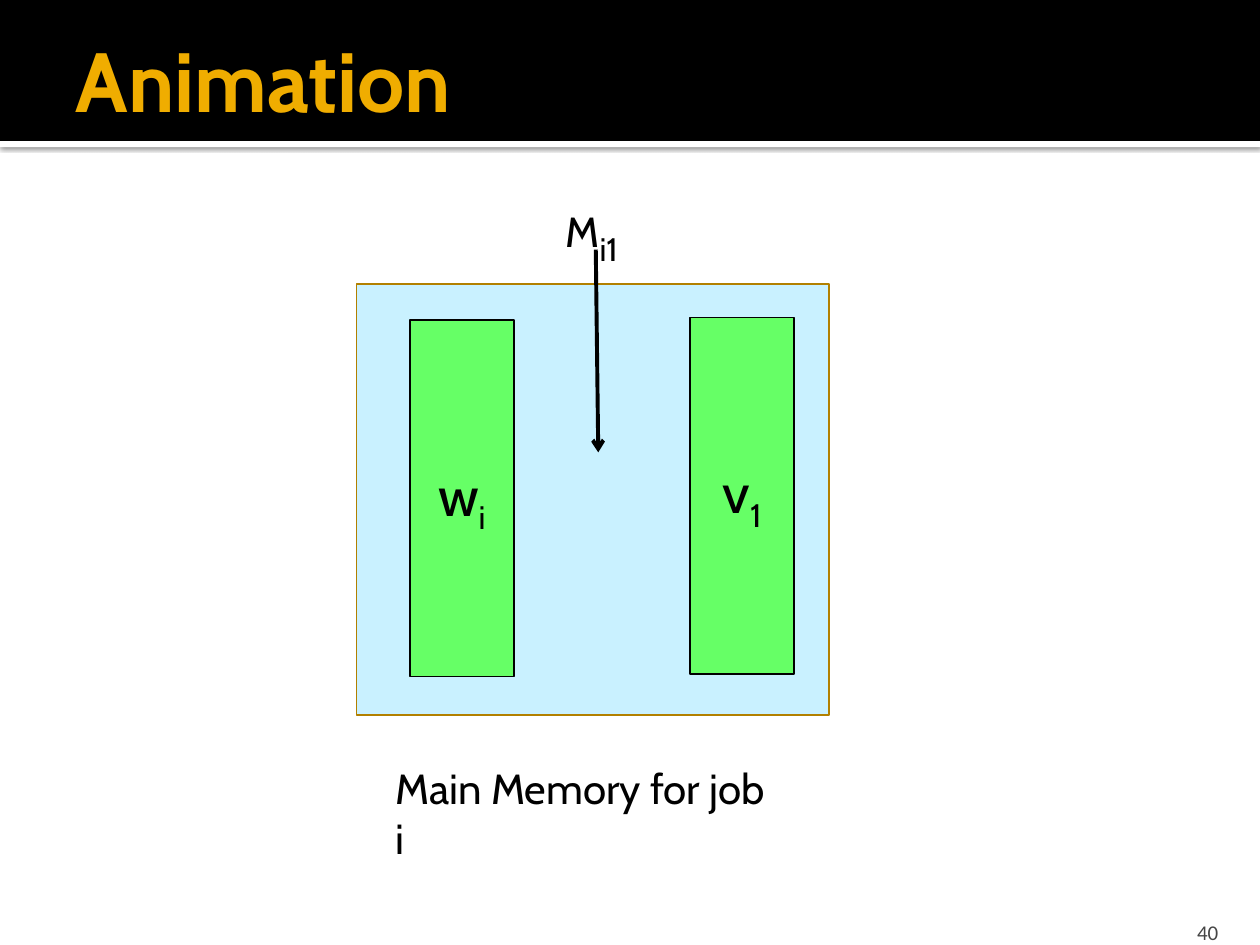
from dataclasses import dataclass

from lxml.etree import SubElement
from pptx import Presentation
from pptx.dml.color import RGBColor
from pptx.enum.shapes import MSO_CONNECTOR, MSO_SHAPE
from pptx.enum.text import MSO_ANCHOR, MSO_AUTO_SIZE, PP_ALIGN
from pptx.oxml.ns import qn
from pptx.util import Cm, Pt


@dataclass(frozen=True)
class Theme:
    """Colours, fonts and type sizes of the slide."""

    black: str = "000000"
    white: str = "FFFFFF"
    gold: str = "F0AD00"
    gray: str = "454545"
    memory: str = "C9F1FF"
    memory_line: str = "B28000"
    vector: str = "66FF66"
    font: str = "Cabin"
    number_font: str = "Calibri"
    title_size: int = 48
    vector_size: int = 32
    label_size: int = 24
    number_size: int = 12


THEME = Theme()


def format_run(run, size, color=THEME.black, font=THEME.font, bold=False):
    """Set the type of one run."""
    run.font.size = Pt(size)
    run.font.name = font
    run.font.bold = bold
    run.font.color.rgb = RGBColor.from_string(color)


def add_subscript(paragraph, text, size):
    """Append a lowered run to a paragraph."""
    run = paragraph.add_run()
    run.text = text
    format_run(run, size)
    run.font._element.set("baseline", "-25000")


def add_rectangle(slide, left, top, width, height, fill, line=None):
    """Add a plain filled rectangle with an optional outline."""
    shape = slide.shapes.add_shape(
        MSO_SHAPE.RECTANGLE, Cm(left), Cm(top), Cm(width), Cm(height))
    shape.shadow.inherit = False
    shape.fill.solid()
    shape.fill.fore_color.rgb = RGBColor.from_string(fill)
    if line:
        shape.line.color.rgb = RGBColor.from_string(line)
        shape.line.width = Pt(1)
    else:
        shape.line.fill.background()
    return shape


def add_shadow(shape):
    """Give a shape a soft shadow straight below it."""
    effects = shape.element.spPr.find(qn("a:effectLst"))
    shadow = SubElement(
        effects, qn("a:outerShdw"), blurRad=str(Pt(2.5)), dist=str(Pt(0.8)),
        dir="5400000", algn="tl", rotWithShape="0")
    color = SubElement(shadow, qn("a:srgbClr"), val=THEME.black)
    SubElement(color, qn("a:alpha"), val="60000")


def add_title(slide, text):
    """Add the header band and place the title on it."""
    add_shadow(add_rectangle(slide, 0, 2.84, 25.4, 0.13, THEME.white))
    add_rectangle(slide, 0, 0, 25.4, 2.84, THEME.black)
    title = slide.shapes.title
    slide.shapes.element.append(title.element)
    title.left, title.top = Cm(1.27), Cm(0.43)
    title.width, title.height = Cm(24.13), Cm(2.34)
    frame = title.text_frame
    frame.text = text
    frame.auto_size = MSO_AUTO_SIZE.NONE
    frame.vertical_anchor = MSO_ANCHOR.MIDDLE
    frame.margin_right = Cm(0.13)
    frame.paragraphs[0].alignment = PP_ALIGN.LEFT
    format_run(frame.paragraphs[0].runs[0], THEME.title_size, THEME.gold, bold=True)


def add_label(slide, left, top, width, height, text, size=THEME.label_size, **style):
    """Add a wrapped text box and return its text frame."""
    box = slide.shapes.add_textbox(Cm(left), Cm(top), Cm(width), Cm(height))
    frame = box.text_frame
    frame.word_wrap = True
    frame.text = text
    format_run(frame.paragraphs[0].runs[0], size, **style)
    return frame


def add_slide_number(slide, text):
    """Add the slide number in the lower right corner."""
    frame = add_label(slide, 22.78, 18.29, 2.03, 0.76, text, THEME.number_size,
                      color=THEME.gray, font=THEME.number_font)
    frame.vertical_anchor = MSO_ANCHOR.BOTTOM
    frame.margin_bottom = 0
    frame.paragraphs[0].alignment = PP_ALIGN.RIGHT


def add_vector(slide, left, top, name, index):
    """Add a tall vector block with a subscripted name."""
    shape = add_rectangle(slide, left, top, 2.1, 7.19, THEME.vector, THEME.black)
    frame = shape.text_frame
    frame.text = name
    frame.vertical_anchor = MSO_ANCHOR.MIDDLE
    paragraph = frame.paragraphs[0]
    paragraph.alignment = PP_ALIGN.CENTER
    format_run(paragraph.runs[0], THEME.vector_size)
    add_subscript(paragraph, index, THEME.vector_size)


def add_arrow(slide, start, end):
    """Add a straight black arrow between two points."""
    connector = slide.shapes.add_connector(
        MSO_CONNECTOR.STRAIGHT, *(Cm(value) for value in start + end))
    connector.line.color.rgb = RGBColor.from_string(THEME.black)
    connector.line.width = Pt(2.25)
    properties = connector.element.spPr
    SubElement(properties.find(qn("a:ln")), qn("a:tailEnd"), type="arrow")
    SubElement(properties, qn("a:effectLst"))


def main():
    """Build and save the slide."""
    presentation = Presentation()
    presentation.slide_width, presentation.slide_height = Cm(25.4), Cm(19.05)
    slide = presentation.slides.add_slide(presentation.slide_layouts[5])
    add_title(slide, "Animation")
    add_slide_number(slide, "40")
    add_rectangle(slide, 7.19, 5.72, 9.53, 8.69, THEME.memory, THEME.memory_line)
    add_label(slide, 7.72, 15.24, 8.28, 1.27, "Main Memory for job i")
    add_vector(slide, 8.26, 6.45, "w", "i")
    add_vector(slide, 13.91, 6.4, "v", "1")
    block = add_label(slide, 11.15, 3.73, 1.73, 1.27, "M")
    add_subscript(block.paragraphs[0], "i1", THEME.vector_size)
    add_arrow(slide, (12.01, 5.03), (12.06, 9.12))
    presentation.save("out.pptx")


if __name__ == "__main__":
    main()
